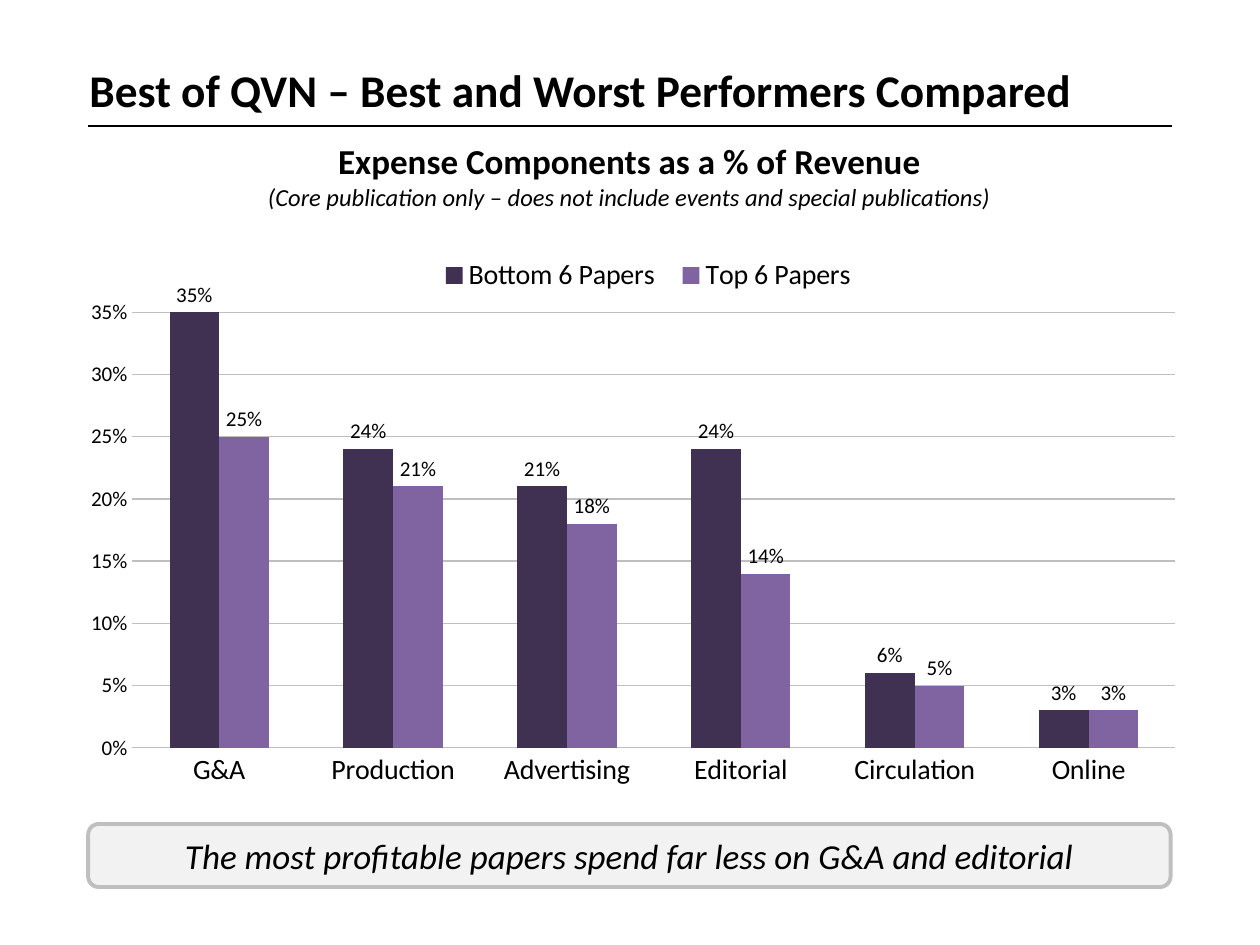
from pptx import Presentation
from pptx.chart.data import CategoryChartData
from pptx.dml.color import RGBColor
from pptx.enum.chart import XL_CHART_TYPE as CT, XL_LABEL_POSITION as LP
from pptx.enum.chart import XL_LEGEND_POSITION as LegendPos, XL_TICK_MARK as Tick
from pptx.enum.shapes import MSO_CONNECTOR, MSO_SHAPE
from pptx.enum.text import MSO_ANCHOR, MSO_AUTO_SIZE, PP_ALIGN
from pptx.oxml import parse_xml
from pptx.oxml.ns import nsdecls, qn
from pptx.util import Inches, Pt
from lxml import etree

BLACK = RGBColor(0x00, 0x00, 0x00)
SILVER = RGBColor(0xBF, 0xBF, 0xBF)
PALE = RGBColor(0xF2, 0xF2, 0xF2)
DARK_PURPLE = RGBColor(0x40, 0x31, 0x52)
PURPLE = RGBColor(0x80, 0x64, 0xA2)
FONT = "Calibri"


def write(p, text, align, **fmt):
    """Put one formatted run in a paragraph."""
    p.alignment = align
    r = p.add_run()
    r.text = text
    r.font.color.rgb = BLACK
    for name, value in {"name": FONT, "bold": False, "italic": False, **fmt}.items():
        setattr(r.font, name, value)


def manual_layout(x, y, w, h, inner=False):
    """Chart layout in fractions of the chart's frame."""
    tags = [("layoutTarget", "inner")] if inner else []
    tags += [("xMode", "edge"), ("yMode", "edge"), ("x", x), ("y", y), ("w", w), ("h", h)]
    body = "".join(f'<c:{tag} val="{val}"/>' for tag, val in tags)
    return parse_xml(f'<c:layout {nsdecls("c")}><c:manualLayout>{body}</c:manualLayout></c:layout>')


prs = Presentation()
prs.slide_width, prs.slide_height = Inches(10), Inches(7.5)
s = prs.slides.add_slide(prs.slide_layouts[5])

# Expense chart
data = CategoryChartData(number_format="0%")
data.categories = ["G&A", "Production", "Advertising", "Editorial", "Circulation", "Online"]
data.add_series("Bottom 6 Papers", [0.35, 0.24, 0.21, 0.24, 0.06, 0.03])
data.add_series("Top 6 Papers", [0.25, 0.21, 0.18, 0.14, 0.05, 0.03])
chart = s.shapes.add_chart(CT.COLUMN_CLUSTERED, Inches(0.51), Inches(1.85),
                           Inches(9), Inches(4.49), data).chart
chart.has_title = False
chart.font.name, chart.font.size, chart.font.color.rgb = FONT, Pt(18), BLACK

# Bars and their labels
plot = chart.plots[0]
plot.gap_width, plot.overlap, plot.vary_by_categories = 150, 0, False
for series, color in zip(plot.series, (DARK_PURPLE, PURPLE)):
    series.format.fill.solid()
    series.format.fill.fore_color.rgb = color
    labels = series.data_labels
    label_format = {"show_value": True, "position": LP.OUTSIDE_END,
                    "number_format": "0%", "number_format_is_linked": False}
    for name, value in label_format.items():
        setattr(labels, name, value)
    labels.font.size = Pt(12)

# Axes
for axis, size in ((chart.category_axis, 16), (chart.value_axis, 12)):
    axis.major_tick_mark = axis.minor_tick_mark = Tick.NONE
    axis.format.line.fill.background()
    axis.tick_labels.font.size = Pt(size)
axis = chart.value_axis
axis.minimum_scale, axis.maximum_scale, axis.major_unit = 0, 0.35, 0.05
axis.tick_labels.number_format = "0%"
axis.tick_labels.number_format_is_linked = False
axis.major_gridlines.format.line.color.rgb = SILVER
axis.major_gridlines.format.line.width = Pt(0.75)

# Legend and plot area positions
chart.has_legend = True
chart.legend.position = LegendPos.TOP
chart.legend.include_in_layout = False
chart.legend.font.size = Pt(16)
root = chart.element if hasattr(chart, "element") else chart._chartSpace
root.find(".//" + qn("c:legendPos")).addnext(manual_layout(0.32, 0.04, 0.39, 0.07))
plot_area = root.find(".//" + qn("c:plotArea"))
for old in plot_area.findall(qn("c:layout")):
    plot_area.remove(old)
plot_area.insert(0, manual_layout(0.06, 0.14, 0.92, 0.77, inner=True))

# Title
title = s.shapes.title
title.left, title.top, title.width, title.height = map(Inches, (0.61, 0.42, 8.5, 0.58))
tf = title.text_frame
tf.auto_size, tf.vertical_anchor = MSO_AUTO_SIZE.NONE, MSO_ANCHOR.MIDDLE
write(tf.paragraphs[0], "Best of QVN – Best and Worst Performers Compared",
      PP_ALIGN.LEFT, size=Pt(25.9), bold=True)

# Rule under the title
rule = s.shapes.add_connector(MSO_CONNECTOR.STRAIGHT, Inches(0.7), Inches(1), Inches(9.3), Inches(1))
rule.line.color.rgb, rule.line.width = BLACK, Pt(0.75)
etree.SubElement(rule._element.spPr, qn("a:effectLst"))

# Chart heading
tf = s.shapes.add_textbox(Inches(0.7), Inches(1.06), Inches(8.59), Inches(0.67)).text_frame
tf.word_wrap, tf.auto_size = True, MSO_AUTO_SIZE.SHAPE_TO_FIT_TEXT
write(tf.paragraphs[0], "Expense Components as a % of Revenue",
      PP_ALIGN.CENTER, size=Pt(20), bold=True)
write(tf.add_paragraph(),
      "(Core publication only – does not include events and special publications)",
      PP_ALIGN.CENTER, size=Pt(14), italic=True)

# Takeaway box
box = s.shapes.add_shape(MSO_SHAPE.ROUNDED_RECTANGLE, Inches(0.7), Inches(6.54),
                         Inches(8.59), Inches(0.5))
box.shadow.inherit = False
box.fill.solid()
box.fill.fore_color.rgb = PALE
box.line.color.rgb, box.line.width = SILVER, Pt(2.25)
tf = box.text_frame
tf.word_wrap, tf.vertical_anchor = True, MSO_ANCHOR.MIDDLE
write(tf.paragraphs[0], "The most profitable papers spend far less on G&A and editorial",
      PP_ALIGN.CENTER, size=Pt(20), italic=True)

prs.save("out.pptx")
